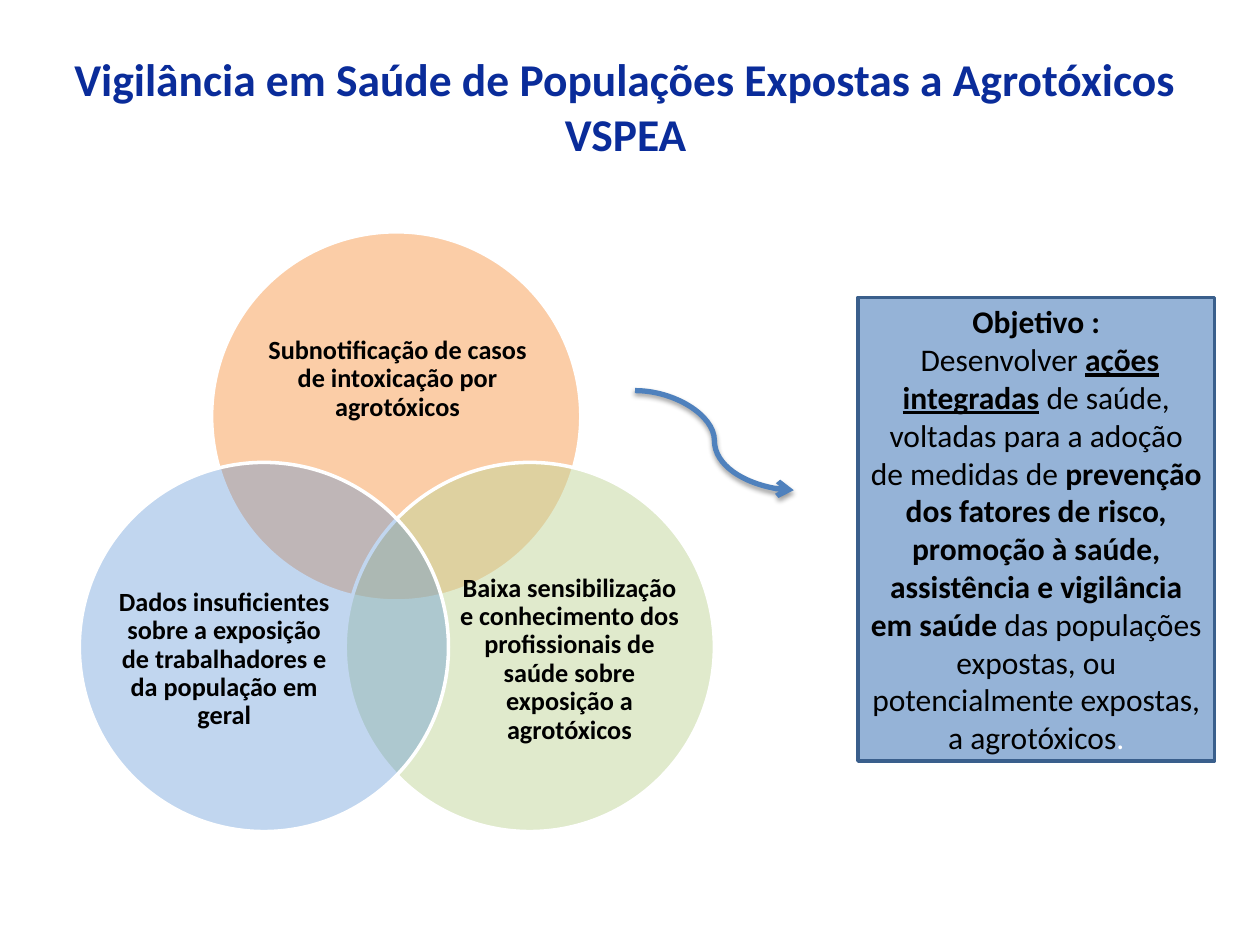
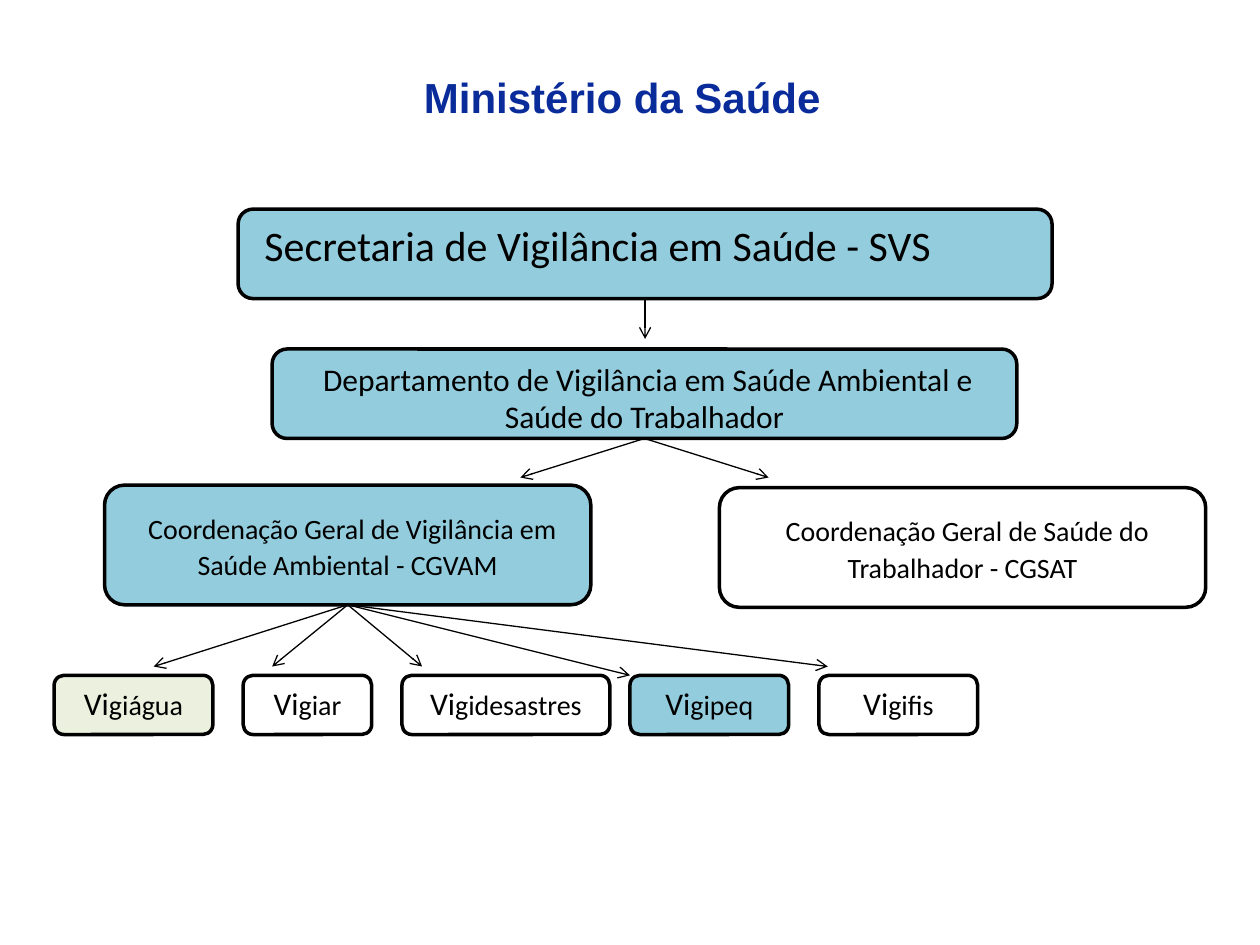
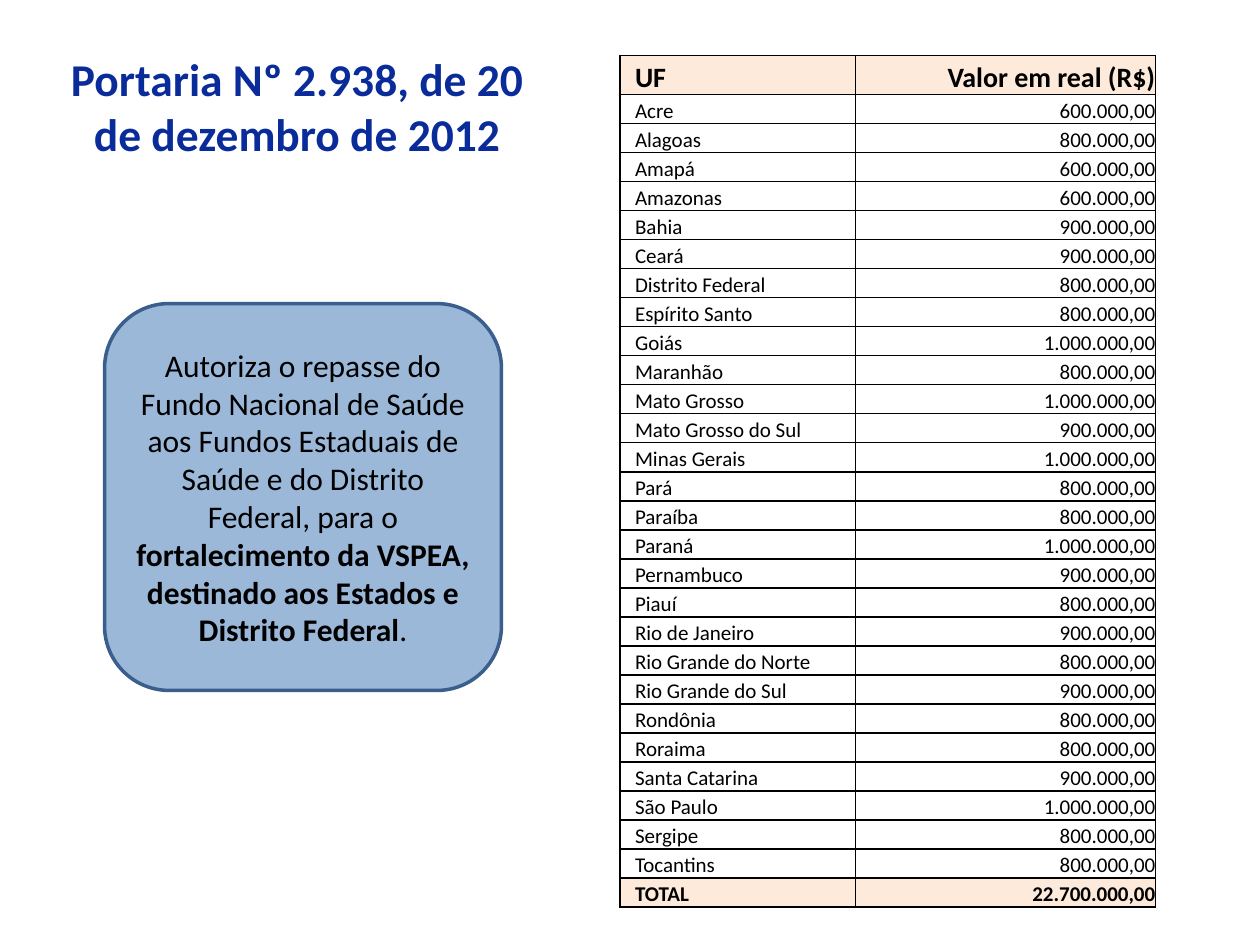
from typing import NamedTuple, Optional

import lxml.etree
import pptx
import pptx.dml.color
import pptx.enum.dml
import pptx.enum.shapes
import pptx.enum.text
import pptx.oxml.ns
import pptx.util
from pptx.util import Inches

FONT = "Calibri"
TITLE_BLUE = "0A2C9A"
BLACK = "000000"
WHITE = "FFFFFF"
AQUA = "93CDDD"
PALE_GREEN = "EBF1DE"
PEACH = "FDEADA"
BOX_BORDER = "3A5F8C"
ACCENT_BLUE = "4F81BD"

SHAPES = pptx.enum.shapes.MSO_SHAPE
CONNECTORS = pptx.enum.shapes.MSO_CONNECTOR
ALIGN = pptx.enum.text.PP_ALIGN
ANCHOR = pptx.enum.text.MSO_ANCHOR


class Frame(NamedTuple):
    left: float
    top: float
    width: float
    height: float

    def lengths(self) -> list:
        return [Inches(value) for value in self]

    def bottom_center(self) -> tuple:
        return self.left + self.width / 2, self.top + self.height


class Span(NamedTuple):
    text: str
    size: float = 18
    bold: bool = False
    underline: bool = False
    color: str = BLACK
    font: str = FONT


class Circle(NamedTuple):
    frame: Frame
    label_frame: Frame
    label: str
    color: str
    opacity: int


class OrgBox(NamedTuple):
    frame: Frame
    spans: list
    fill: str
    align: ALIGN = ALIGN.CENTER


class Program(NamedTuple):
    left: float
    width: float
    suffix: str
    fill: str
    arrow_end: tuple


def rgb(color: str) -> pptx.dml.color.RGBColor:
    return pptx.dml.color.RGBColor.from_string(color)


def add_xml(parent, tag: str, **attributes):
    child = lxml.etree.SubElement(parent, pptx.oxml.ns.qn(tag))
    for name, value in attributes.items():
        child.set(name, str(value))
    return child


def write_paragraph(para, spans: list, align=ALIGN.CENTER, spacing: Optional[float] = None) -> None:
    para.alignment = align
    if spacing:
        para.line_spacing = spacing
    for span in spans:
        run = para.add_run()
        run.text = span.text
        run.font.name = span.font
        run.font.size = pptx.util.Pt(span.size)
        run.font.bold = span.bold
        run.font.underline = span.underline
        run.font.color.rgb = rgb(span.color)


def write_text(shape, paragraphs: list, anchor=ANCHOR.TOP, align=ALIGN.CENTER,
               spacing: Optional[float] = None) -> None:
    frame = shape.text_frame
    frame.word_wrap = True
    frame.vertical_anchor = anchor
    for index, spans in enumerate(paragraphs):
        para = frame.add_paragraph() if index else frame.paragraphs[0]
        write_paragraph(para, spans, align, spacing)


def add_title(page, frame: Frame, text: str, size: float = 26, font: str = FONT) -> None:
    box = page.shapes.add_textbox(*frame.lengths())
    write_text(box, [[Span(text, size, True, color=TITLE_BLUE, font=font)]])


def add_box(page, kind, frame: Frame, fill: str, border: str, opacity: int = 100):
    """Add a shadowless shape with a 2 pt border and a fill of the given opacity in percent."""
    box = page.shapes.add_shape(kind, *frame.lengths())
    box.shadow.inherit = False
    box.fill.solid()
    box.fill.fore_color.rgb = rgb(fill)
    if opacity < 100:
        color = box.fill._xPr.find(".//" + pptx.oxml.ns.qn("a:srgbClr"))
        add_xml(color, "a:alpha", val=opacity * 1000)
    box.line.color.rgb = rgb(border)
    box.line.width = pptx.util.Pt(2)
    return box


def add_arrow(page, start: tuple, end: tuple, kind=CONNECTORS.STRAIGHT,
              color: str = BLACK, width: float = 0.75):
    """Add an arrow and return its empty effect list."""
    arrow = page.shapes.add_connector(kind, *[Inches(value) for value in start + end])
    arrow.line.color.rgb = rgb(color)
    arrow.line.width = pptx.util.Pt(width)
    add_xml(arrow.line._get_or_add_ln(), "a:tailEnd", type="arrow")
    return add_xml(arrow._element.spPr, "a:effectLst")


def add_goal_page(page) -> None:
    diameter = 2.93
    lower_top, label_top = 3.67, 4.43
    circles = [
        Circle(Frame(1.68, 1.84, diameter, diameter), Frame(2.08, 2.35, 2.15, 1.32),
               "Subnotificação de casos de intoxicação por agrotóxicos", "F79646", 47),
        Circle(Frame(2.74, lower_top, diameter, diameter), Frame(3.64, label_top, 1.76, 1.61),
               "Baixa sensibilização e conhecimento dos profissionais de saúde sobre exposição"
               " a agrotóxicos", "C3D69B", 50),
        Circle(Frame(0.63, lower_top, diameter, diameter), Frame(0.9, label_top, 1.76, 1.61),
               "Dados insuficientes sobre a exposição de trabalhadores e da população em geral",
               "558ED5", 36),
    ]
    for circle in circles:
        add_box(page, SHAPES.OVAL, circle.frame, circle.color, WHITE, circle.opacity)
        label = page.shapes.add_textbox(*circle.label_frame.lengths())
        text = label.text_frame
        text.margin_left = text.margin_right = text.margin_top = text.margin_bottom = 0
        write_text(label, [[Span(circle.label, 15, True)]], ANCHOR.MIDDLE, spacing=0.9)

    goal = add_box(page, SHAPES.RECTANGLE, Frame(6.81, 2.36, 2.83, 3.68), "95B3D7", BOX_BORDER)
    write_text(goal, [
        [Span("Objetivo :", bold=True)],
        [
            Span(" Desenvolver "),
            Span("ações integradas", bold=True, underline=True),
            Span(" de saúde, voltadas para a adoção de medidas de "),
            Span("prevenção dos fatores de risco, promoção à saúde, assistência e vigilância"
                 " em saúde", bold=True),
            Span(" das populações expostas, ou potencialmente expostas, a agrotóxicos"),
            Span(".", color=WHITE),
        ],
    ], ANCHOR.MIDDLE)

    effects = add_arrow(page, (5.04, 3.1), (6.3, 3.89), CONNECTORS.CURVE, ACCENT_BLUE, 3)
    shadow = add_xml(effects, "a:outerShdw", blurRad=pptx.util.Pt(3.1), dist=pptx.util.Pt(1.6),
                     dir=90 * 60000, rotWithShape=0)
    add_xml(add_xml(shadow, "a:srgbClr", val=BLACK), "a:alpha", val=38000)
    add_title(page, Frame(0.12, 0.36, 9.69, 0.87),
              "Vigilância em Saúde de Populações Expostas a Agrotóxicos VSPEA")


def add_organization_page(page) -> None:
    secretariat = Frame(1.89, 1.66, 6.46, 0.71)
    department = Frame(2.16, 2.77, 5.91, 0.71)
    environment = Frame(0.83, 3.85, 3.86, 0.95)
    workers = Frame(5.71, 3.87, 3.86, 0.95)
    programs = [
        Program(0.43, 1.26, "giágua", PALE_GREEN, (1.22, 5.29)),
        Program(1.93, 1.02, "giar", WHITE, (2.16, 5.29)),
        Program(3.19, 1.65, "gidesastres", WHITE, (3.35, 5.29)),
        Program(5, 1.26, "gipeq", AQUA, (5, 5.36)),
        Program(6.5, 1.26, "gifis", WHITE, (6.57, 5.29)),
    ]
    boxes = [
        OrgBox(secretariat, [Span(" Secretaria de Vigilância em Saúde - SVS", 24)],
               AQUA, ALIGN.LEFT),
        OrgBox(department, [Span(" Departamento de Vigilância em Saúde Ambiental e"
                                 " Saúde do Trabalhador")], AQUA),
        OrgBox(environment, [Span(" ", 24), Span("Coordenação Geral de Vigilância em Saúde"
                                                 " Ambiental - CGVAM", 16)], AQUA),
        OrgBox(workers, [Span(" ", 24), Span("Coordenação Geral de Saúde do Trabalhador"
                                             " - CGSAT", 16)], WHITE),
    ]
    boxes += [OrgBox(Frame(program.left, 5.36, program.width, 0.47),
                     [Span("Vi"), Span(program.suffix, 16)], program.fill)
              for program in programs]
    for box in boxes:
        shape = add_box(page, SHAPES.ROUNDED_RECTANGLE, box.frame, box.fill, BLACK)
        write_text(shape, [box.spans], align=box.align)

    arrow_ends = {
        secretariat: [(5.12, 2.69)],
        department: [(4.13, 3.79), (6.1, 3.79)],
        environment: [program.arrow_end for program in programs],
    }
    for parent, ends in arrow_ends.items():
        for end in ends:
            add_arrow(page, parent.bottom_center(), end)
    add_title(page, Frame(0.34, 0.52, 9.29, 0.94), "Ministério da Saúde ", 24, "Arial")


THOUSANDS_BY_STATE = {
    "Acre": 600, "Alagoas": 800, "Amapá": 600, "Amazonas": 600, "Bahia": 900, "Ceará": 900,
    "Distrito Federal": 800, "Espírito Santo": 800, "Goiás": 1000, "Maranhão": 800,
    "Mato Grosso": 1000, "Mato Grosso do Sul": 900, "Minas Gerais": 1000, "Pará": 800,
    "Paraíba": 800, "Paraná": 1000, "Pernambuco": 900, "Piauí": 800, "Rio de Janeiro": 900,
    "Rio Grande do Norte": 800, "Rio Grande do Sul": 900, "Rondônia": 800, "Roraima": 800,
    "Santa Catarina": 900, "São Paulo": 1000, "Sergipe": 800, "Tocantins": 800,
}


def format_reais(thousands: int) -> str:
    return f"{thousands * 1000:,}".replace(",", ".") + ",00"


def style_cell(cell, span: Span, align, fill: Optional[str]) -> None:
    cell.margin_left = cell.margin_right = cell.margin_top = cell.margin_bottom = 0
    cell.vertical_anchor = ANCHOR.MIDDLE
    para = cell.text_frame.paragraphs[0]
    write_paragraph(para, [span], align, 1.15)
    para.space_after = pptx.util.Pt(10)
    properties = para._p.get_or_add_pPr()
    properties.set("marL", str(Inches(0.12)))
    properties.set("indent", "0")
    cell_properties = cell._tc.get_or_add_tcPr()
    for side in ("a:lnL", "a:lnR", "a:lnT", "a:lnB"):
        border = add_xml(cell_properties, side, w=pptx.util.Pt(1))
        add_xml(add_xml(border, "a:solidFill"), "a:srgbClr", val=BLACK)
    if fill:
        cell.fill.solid()
        cell.fill.fore_color.rgb = rgb(fill)
    else:
        cell.fill.background()


def add_funding_table(page) -> None:
    rows = [("UF", "Valor em real (R$)")]
    rows += [(state, format_reais(value)) for state, value in THOUSANDS_BY_STATE.items()]
    rows.append(("TOTAL", format_reais(sum(THOUSANDS_BY_STATE.values()))))
    table = page.shapes.add_table(len(rows), 2, *Frame(4.92, 0.44, 4.25, 6.86).lengths()).table
    table.first_row = table.horz_banding = False
    for column, width in zip(table.columns, (1.87, 2.38)):
        column.width = Inches(width)
    for index, texts in enumerate(rows):
        is_header = index == 0
        is_strong = is_header or index == len(rows) - 1
        table.rows[index].height = Inches(0.31 if is_header else 0.23)
        for column, (text, align) in enumerate(zip(texts, (ALIGN.LEFT, ALIGN.RIGHT))):
            style_cell(table.cell(index, column), Span(text, 16 if is_header else 12, is_strong),
                       align, PEACH if is_strong else None)


def add_funding_page(page) -> None:
    add_title(page, Frame(0.35, 0.36, 4.02, 1.34), "Portaria Nº 2.938, de 20 de dezembro de 2012")
    add_funding_table(page)
    purpose = add_box(page, SHAPES.ROUNDED_RECTANGLE, Frame(0.83, 2.41, 3.15, 3.07),
                      ACCENT_BLUE, BOX_BORDER, 56)
    write_text(purpose, [[
        Span("Autoriza o repasse do Fundo Nacional de Saúde aos Fundos Estaduais de Saúde"
             " e do Distrito Federal, para o "),
        Span("fortalecimento da VSPEA, destinado aos Estados e Distrito Federal", bold=True),
        Span("."),
    ]], ANCHOR.MIDDLE)


def main() -> None:
    deck = pptx.Presentation()
    deck.slide_width, deck.slide_height = Inches(10), Inches(7.5)
    for fill_page in (add_goal_page, add_organization_page, add_funding_page):
        fill_page(deck.slides.add_slide(deck.slide_layouts[6]))
    deck.save("out.pptx")


if __name__ == "__main__":
    main()
